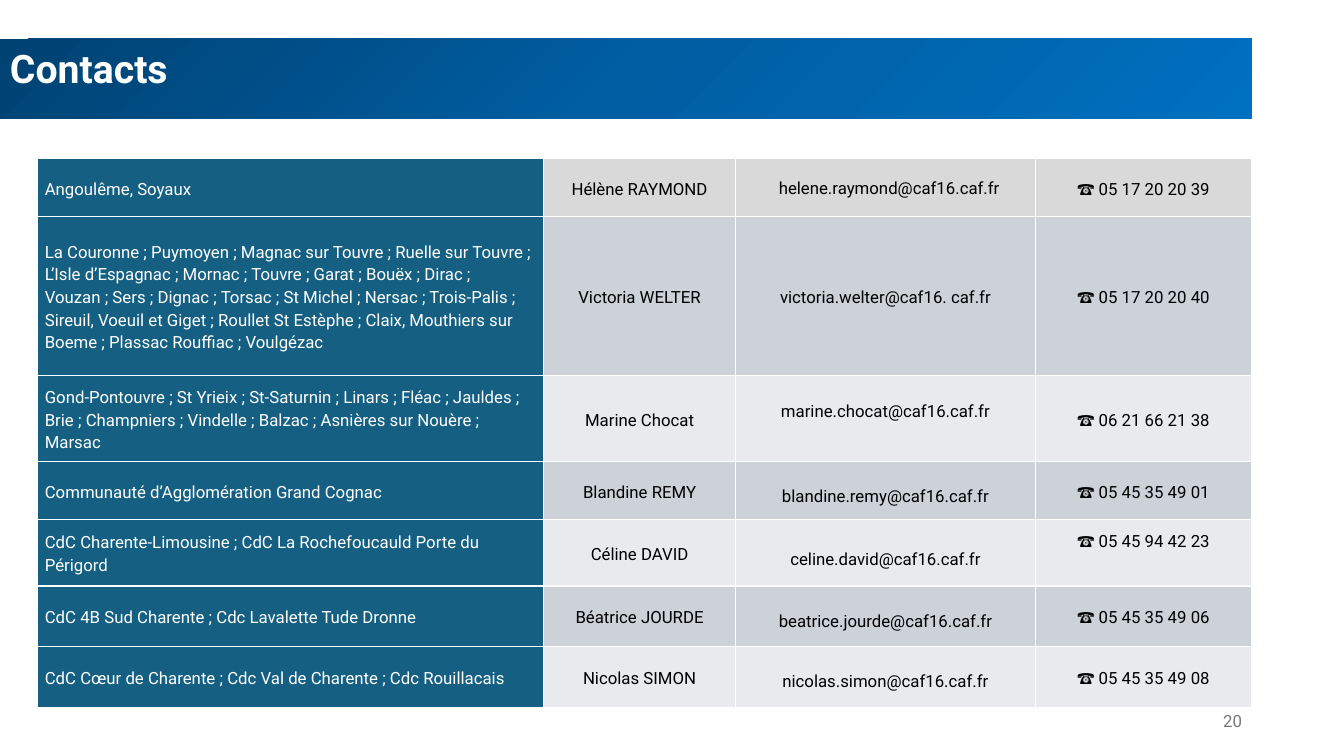
from copy import deepcopy

from lxml.etree import SubElement
from pptx import Presentation
from pptx.dml.color import RGBColor
from pptx.enum.shapes import MSO_SHAPE
from pptx.enum.text import MSO_ANCHOR, PP_ALIGN
from pptx.oxml.ns import qn
from pptx.util import Pt

WHITE = RGBColor(0xFF, 0xFF, 0xFF)
BLACK = RGBColor(0x00, 0x00, 0x00)
GREY = RGBColor(0x79, 0x79, 0x79)
TEAL = RGBColor(0x15, 0x60, 0x82)
FIRST_ROW = RGBColor(0xD9, 0xD9, 0xD9)
BANDS = (RGBColor(0xE8, 0xEA, 0xED), RGBColor(0xCC, 0xD2, 0xD8))
BANNER_STOPS = (RGBColor(0x00, 0x42, 0x72), RGBColor(0x00, 0x5E, 0xA2),
                RGBColor(0x00, 0x70, 0xC0))

COLUMN_WIDTHS = (361.5, 136.8, 214.5, 154.1)

# Row height, space above the e-mail address, areas, name, e-mail, telephone
CONTACTS = (
    (41.5, 12, "Angoulême, Soyaux",
     "Hélène RAYMOND", "helene.raymond@caf16.caf.fr", "05 17 20 20 39"),
    (113.5, 48.6,
     "La Couronne ; Puymoyen ; Magnac sur Touvre ; Ruelle sur Touvre ; "
     "L’Isle d’Espagnac ; Mornac ; Touvre ; Garat ; Bouëx ; Dirac ; "
     "Vouzan ; Sers ; Dignac ; Torsac ; St Michel ; Nersac ; Trois-Palis ; "
     "Sireuil, Voeuil et Giget ; Roullet St Estèphe ; Claix, Mouthiers sur "
     "Boeme ; Plassac Rouffiac ; Voulgézac",
     "Victoria WELTER", "victoria.welter@caf16. caf.fr", "05 17 20 20 40"),
    (61.4, 16.2,
     "Gond-Pontouvre ; St Yrieix ; St-Saturnin ; Linars ; Fléac ; Jauldes ; "
     "Brie ; Champniers ; Vindelle ; Balzac ; Asnières sur Nouère ; Marsac",
     "Marine Chocat", "marine.chocat@caf16.caf.fr", "06 21 66 21 38"),
    (41.5, 16.2, "Communauté d’Agglomération Grand Cognac",
     "Blandine REMY", "blandine.remy@caf16.caf.fr", "05 45 35 49 01"),
    (47.3, 19.1, "CdC Charente-Limousine ; CdC La Rochefoucauld Porte du Périgord",
     "Céline DAVID", "celine.david@caf16.caf.fr", "05 45 94 42 23"),
    (43.2, 16.2, "CdC 4B Sud Charente ; Cdc Lavalette Tude Dronne",
     "Béatrice JOURDE", "beatrice.jourde@caf16.caf.fr", "05 45 35 49 06"),
    (43.8, 16.2, "CdC Cœur de Charente ; Cdc Val de Charente ; Cdc Rouillacais",
     "Nicolas SIMON", "nicolas.simon@caf16.caf.fr", "05 45 35 49 08"),
)


def write(frame, text, size=12, color=BLACK, bold=False, align=PP_ALIGN.LEFT,
          spacing=1.0, font="Roboto"):
    """Fill a text frame with one formatted paragraph."""
    frame.word_wrap = True
    paragraph = frame.paragraphs[0]
    paragraph.alignment = align
    paragraph.line_spacing = spacing
    run = paragraph.add_run()
    run.text = text
    run.font.name = font
    run.font.size = Pt(size)
    run.font.bold = bold
    run.font.color.rgb = color


class ContactSlide:
    def __init__(self, slide):
        self.slide = slide
        self.border_width = 1
        self.cell_inset = 5
        self.cell_spacing = 1.15

    def banner(self, text, left, top, width, height):
        bar = self.slide.shapes.add_shape(
            MSO_SHAPE.RECTANGLE, Pt(left), Pt(top), Pt(width), Pt(height))
        bar.shadow.inherit = False
        bar.line.fill.background()
        bar.fill.gradient()
        bar.fill.gradient_angle = 315
        stop_list = bar.element.spPr.find(qn("a:gradFill")).find(qn("a:gsLst"))
        stop_list.insert(1, deepcopy(stop_list[0]))
        for index, (stop, color) in enumerate(zip(bar.fill.gradient_stops, BANNER_STOPS)):
            stop.position = index / 2
            stop.color.rgb = color
        bar.text_frame.vertical_anchor = MSO_ANCHOR.TOP
        write(bar.text_frame, text, size=28, color=WHITE, bold=True)

    def page_number(self, text, left, top, width, height):
        box = self.slide.shapes.add_textbox(Pt(left), Pt(top), Pt(width), Pt(height))
        box.text_frame.vertical_anchor = MSO_ANCHOR.MIDDLE
        write(box.text_frame, text, color=GREY, align=PP_ALIGN.RIGHT)

    def table(self, left, top, widths, heights):
        table = self.slide.shapes.add_table(
            len(heights), len(widths), Pt(left), Pt(top),
            Pt(sum(widths)), Pt(sum(heights))).table
        for column, width in zip(table.columns, widths):
            column.width = Pt(width)
        for row, height in zip(table.rows, heights):
            row.height = Pt(height)
        return table

    def cell(self, cell, text, fill, anchor=MSO_ANCHOR.MIDDLE, left=None,
             top=0, bottom=0, **text_format):
        cell.margin_left = Pt(self.cell_inset if left is None else left)
        cell.margin_right = Pt(self.cell_inset)
        cell.margin_top, cell.margin_bottom = Pt(top), Pt(bottom)
        cell.vertical_anchor = anchor
        write(cell.text_frame, text, **{"spacing": self.cell_spacing, **text_format})
        # Borders come before the fill in the cell properties
        properties = cell._tc.get_or_add_tcPr()
        for side in ("a:lnL", "a:lnR", "a:lnT", "a:lnB"):
            line = SubElement(properties, qn(side), w=str(Pt(self.border_width)))
            solid = SubElement(line, qn("a:solidFill"))
            SubElement(solid, qn("a:srgbClr"), val=str(WHITE))
        cell.fill.solid()
        cell.fill.fore_color.rgb = fill


def main():
    deck = Presentation()
    deck.slide_width, deck.slide_height = Pt(960), Pt(540)
    page = ContactSlide(deck.slides.add_slide(deck.slide_layouts[6]))

    # Page number and title banner
    page.page_number("20", 678.24, 500.4, 216, 28.8)
    page.banner("Contacts", 0, 27.8, 894.24, 57)

    # Contact table
    directory = page.table(27, 113.4, COLUMN_WIDTHS, [contact[0] for contact in CONTACTS])
    for row, (_, email_top, areas, name, email, phone) in enumerate(CONTACTS):
        band = BANDS[row % 2] if row else FIRST_ROW
        email_format = {"align": PP_ALIGN.CENTER}
        if row == 0:
            email_format = {"left": 31}
        phone_format = {}
        if name == "Céline DAVID":
            phone_format = {"bottom": 16, "spacing": 1.0}
        page.cell(directory.cell(row, 0), areas, TEAL, color=WHITE,
                  align=PP_ALIGN.LEFT if row else PP_ALIGN.JUSTIFY)
        page.cell(directory.cell(row, 1), name, band, align=PP_ALIGN.CENTER)
        page.cell(directory.cell(row, 2), email, band, anchor=MSO_ANCHOR.TOP,
                  top=email_top, **email_format)
        page.cell(directory.cell(row, 3), f"☎ {phone}", band,
                  align=PP_ALIGN.CENTER, **phone_format)

    deck.save("out.pptx")


if __name__ == "__main__":
    main()
